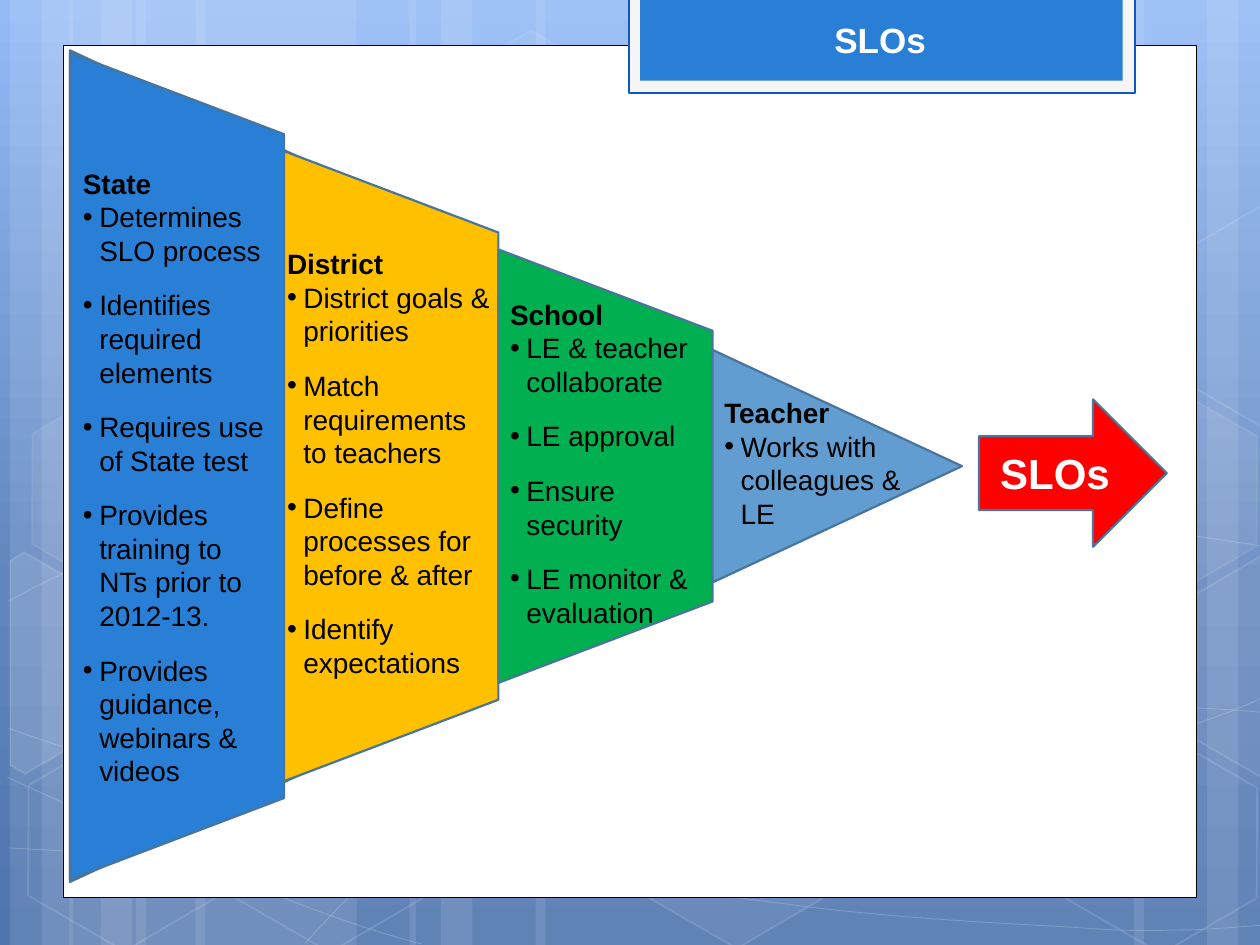
import math
from copy import deepcopy

from lxml import etree
from pptx import Presentation
from pptx import util as u
from pptx.dml.color import RGBColor
from pptx.enum import shapes, text
from pptx.oxml import ns

COLUMNS, ROWS = 10, 7.5
KINDS = shapes.MSO_SHAPE
WHITE, BLACK, BLUE, EDGE = "FFFFFF", "000000", "297FD5", "49749B"

STRIPES = [(1.08, 1.75), (0.08, 0.5), (0.33, 0.83), (1.55, 1.75), (0.55, 0.5), (0.8, 0.83),
           (7.33, 1.75), (9.58, 0.5), (9, 0.83), (4.25, 3.08), (3.25, 0.5), (3.5, 0.83)]
HEXAGONS = [(3.34, 0.36, 4, 8), (4.97, 5.89, 6, 12), (0.11, 5.91, None, 12),
            (0.14, 3.12, 7, 8), (1.74, 5.92, None, 12), (7.53, 4.53, 10, 12),
            (8.34, 5.93, None, 12), (8.34, 3.14, 7, 8)]
CUT_HEXAGONS = [
    ((0.36, 5.35), 10, [(0.08, 4.45), (0.19, 4.38), (0.96, 4.82), (0.95, 5.7), (0.2, 6.14),
                        (0.08, 6.07)]),
    ((9.85, 5.2), 4, [(9.26, 4.85), (10.01, 4.41), (10.09, 4.46), (10.09, 6.13),
                      (10.02, 6.17), (9.26, 5.73)]),
    ((9.85, 2.41), None, [(9.26, 2.07), (10.01, 1.63), (10.1, 1.68), (10.09, 3.35),
                          (10.02, 3.39), (9.26, 2.95)]),
]
CURVES = [
    [(0.07, 6.73), (0.61, 6.76), (1.15, 6.79), (1.9, 6.78), (2.65, 6.77), (3.58, 6.75),
     (4.58, 6.65), (5.58, 6.55), (7, 6.36), (7.92, 6.17), (8.83, 5.98), (9.77, 5.68),
     (10.07, 5.51)],
    [(0.07, 4.77), (0.36, 4.61), (0.65, 4.46), (1.21, 4.31), (1.78, 4.16), (2.59, 3.94),
     (3.47, 3.87), (4.36, 3.8), (5.44, 3.79), (6.54, 3.87), (7.64, 3.95), (9.47, 4.26),
     (10.07, 4.34)],
    [(0.06, 6.17), (1.27, 6.72), (2.47, 7.27), (3.34, 7.49)],
    [(0.07, 5.78), (0.38, 5.89), (0.7, 6), (1.28, 6.16), (1.86, 6.31), (2.73, 6.56),
     (3.57, 6.73), (4.4, 6.9), (5.45, 7.08), (6.28, 7.18), (7.11, 7.29), (8, 7.33),
     (8.53, 7.36), (9.05, 7.4), (9.19, 7.38), (9.45, 7.38), (9.71, 7.37), (9.89, 7.35),
     (10.07, 7.34)],
    [(2.42, 7.49), (2.6, 7.29), (2.78, 7.09), (3.02, 6.91), (3.26, 6.73), (3.6, 6.53),
     (3.88, 6.39), (4.16, 6.25), (4.33, 6.19), (4.7, 6.09), (5.06, 5.99), (5.73, 5.85),
     (6.08, 5.78), (6.44, 5.71), (6.49, 5.71), (6.8, 5.69), (7.11, 5.66), (7.6, 5.63),
     (7.94, 5.62), (8.29, 5.61), (8.86, 5.62), (8.86, 5.62), (8.86, 5.62), (9.53, 5.62),
     (9.53, 5.62), (9.71, 5.63), (9.88, 5.64), (9.97, 5.65), (10.06, 5.66), (10.03, 5.65),
     (10.06, 5.66)],
]
LEVELS = [
    ("State", BLUE, (0.56, 1.27, 1.7, 5.08),
     ["Determines SLO process", "Identifies required elements", "Requires use of State test",
      "Provides training to NTs prior to 2012-13.", "Provides guidance, webinars & videos"]),
    ("District", "FFC000", (2.18, 1.91, 1.84, 3.57),
     ["District goals & priorities", "Match requirements to teachers",
      "Define processes for before & after", "Identify expectations"]),
    ("School", "00B050", (3.95, 2.31, 1.8, 2.76),
     ["LE & teacher collaborate", "LE approval", "Ensure security",
      "LE monitor & evaluation"]),
    ("Teacher", "629DD1", (5.65, 3.09, 1.7, 1.62), ["Works with colleagues & LE"]),
]


def cells(*counts):
    """Turn numbers of grid cells into slide lengths."""
    return [u.Inches(count) for count in counts]


def color(value):
    """Return the colour of a hex string."""
    return RGBColor.from_string(value)


def fade(parent, percent):
    """Set the opacity of the solid fill inside an element."""
    tone = parent.find("a:solidFill/a:srgbClr", {"a": ns.nsuri("a")})
    etree.SubElement(tone, ns.qn("a:alpha")).set("val", str(percent * 1000))


def paint(shape, fill=None, line=None, width=1.25, fill_alpha=None, line_alpha=None):
    """Set the fill and outline of a shape and drop its shadow."""
    shape.shadow.inherit = False
    if fill:
        shape.fill.solid()
        shape.fill.fore_color.rgb = color(fill)
        if fill_alpha:
            fade(shape.element.spPr, fill_alpha)
    else:
        shape.fill.background()
    if line:
        shape.line.color.rgb = color(line)
        shape.line.width = u.Pt(width)
        if line_alpha:
            fade(shape.element.spPr.find(ns.qn("a:ln")), line_alpha)
    else:
        shape.line.fill.background()
    return shape


def add_block(page, kind, box, turn=0, adjust=None, **look):
    """Add a preset shape in a box."""
    shape = page.shapes.add_shape(kind, *cells(*box))
    shape.rotation = turn
    if adjust:
        shape.adjustments[0] = adjust
    return paint(shape, **look)


def add_outline(page, points, close, **look):
    """Add a freeform through points."""
    spots = [cells(*point) for point in points]
    builder = page.shapes.build_freeform(*spots[0])
    builder.add_line_segments(spots[1:], close=close)
    return paint(builder.convert_to_shape(), **look)


def add_curve(page, knots, **look):
    """Add an open chain of cubic curves."""
    shape = add_outline(page, knots, False, **look)
    lines = list(shape.element.iter(ns.qn("a:lnTo")))
    track = lines[0].getparent()
    for start in range(0, len(lines), 3):
        curve = etree.SubElement(track, ns.qn("a:cubicBezTo"))
        for segment in lines[start:start + 3]:
            curve.append(segment[0])
            track.remove(segment)


def unturn(point, center, degrees):
    """Turn a point back around a center."""
    angle = math.radians(-degrees)
    x, y = point[0] - center[0], point[1] - center[1]
    return (center[0] + x * math.cos(angle) - y * math.sin(angle),
            center[1] + x * math.sin(angle) + y * math.cos(angle))


def write(para, words, size=16, tone=BLACK, bold=False, bullet=False, align=None):
    """Write formatted text into a paragraph."""
    span = para.add_run()
    span.text = words
    span.font.name, span.font.size, span.font.bold = "Arial", u.Pt(size), bold
    span.font.color.rgb = color(tone)
    para.alignment = align
    if bullet:
        para.space_after = u.Pt(12)
        props = para._p.get_or_add_pPr()
        indent = u.Inches(0.13)
        props.set("marL", str(indent))
        props.set("indent", str(-indent))
        etree.SubElement(props, ns.qn("a:buFont")).set("typeface", "Arial")
        etree.SubElement(props, ns.qn("a:buChar")).set("char", "•")


def add_text(page, box):
    """Add a wrapping text box and return its frame."""
    frame = page.shapes.add_textbox(*cells(*box)).text_frame
    frame.word_wrap = True
    frame.auto_size = text.MSO_AUTO_SIZE.SHAPE_TO_FIT_TEXT
    return frame


def draw_backdrop(page):
    """Draw the gradient, stripes, curves and hexagons."""
    fill = page.background.fill
    fill.gradient()
    fill.gradient_angle = 270
    last = page.element.find(".//" + ns.qn("a:gsLst"))[-1]
    last.addprevious(deepcopy(last))
    for stop, (place, tone) in zip(
            fill.gradient_stops, [(0, "93BBF6"), (0.62, "6186BE"), (1, "4F75AE")]):
        stop.position = place
        stop.color.rgb = color(tone)
    for left, width in STRIPES:
        add_block(page, KINDS.RECTANGLE, (left, 0, width, ROWS), fill=WHITE, fill_alpha=10)
    for knots in CURVES:
        add_curve(page, knots, line=WHITE, width=0.5, line_alpha=20)
    for left, top, alpha, line_alpha in HEXAGONS:
        add_block(page, KINDS.HEXAGON, (left, top, 1.75, 1.52), 30, 0.285, fill=alpha and WHITE,
                  fill_alpha=alpha, line=WHITE, width=1, line_alpha=line_alpha)
    for center, alpha, points in CUT_HEXAGONS:
        shape = add_outline(page, [unturn(point, center, 30) for point in points], True,
                            fill=alpha and WHITE, fill_alpha=alpha, line=WHITE, width=1,
                            line_alpha=12)
        shape.rotation = 30


def draw_frame(page, panel, tab):
    """Draw the white panel and the title tab."""
    left, top, width, height = tab
    add_block(page, KINDS.RECTANGLE, panel, fill=WHITE, line=BLACK, width=0.5)
    add_block(page, KINDS.RECTANGLE, tab, fill="F5F5F5", line="0E58C4")
    add_block(page, KINDS.RECTANGLE, (left + 0.09, top - 0.02, width - 0.19, height - 0.08),
              fill=BLUE)


def move_to_layout(page):
    """Move the shapes drawn so far from the page to its layout."""
    tree = page.slide_layout.shapes.element if hasattr(page.slide_layout.shapes, "element") \
        else page.slide_layout.element.cSld.spTree
    for holder in list(page.slide_layout.placeholders):
        tree.remove(holder.element)
    for shape in list(page.shapes):
        tree.append(shape.element)


def draw_funnel(page, box):
    """Draw the narrowing levels and their lists."""
    left, top, width, height = box
    middle, band, shrink = top + height / 2, 1.7, 1.56
    add_block(page, KINDS.ISOSCELES_TRIANGLE,
              (left + (width - height) / 2, middle - width / 2, height, width), 90,
              fill=LEVELS[-1][1], line=EDGE)
    for index, (_, tone, _, _) in enumerate(LEVELS[:-1]):
        length = height - 0.04 - shrink * index
        center = left + band * (index + 0.5)
        add_block(page, KINDS.TRAPEZOID, (center - length / 2, middle - band / 2, length, band),
                  90, 0.38, fill=tone, line=EDGE)
    for name, _, area, items in LEVELS:
        frame = add_text(page, area)
        write(frame.paragraphs[0], name, bold=True)
        for item in items:
            write(frame.add_paragraph(), item, bullet=True)


def draw_result(page, box):
    """Draw the arrow that names the result."""
    left, top, _, _ = box
    add_block(page, KINDS.RIGHT_ARROW, box, fill="FF0000", line=EDGE)
    frame = add_text(page, (left + 0.07, top + 0.33, 1.2, 0.5))
    write(frame.paragraphs[0], "SLOs", size=24, tone=WHITE, bold=True)


def main():
    """Build the slide and save the deck."""
    deck = Presentation()
    deck.slide_width, deck.slide_height = cells(COLUMNS, ROWS)
    page = deck.slides.add_slide(deck.slide_layouts[6])
    draw_backdrop(page)
    draw_frame(page, (0.5, 0.36, 9, 6.76), (4.99, -0.02, 4.02, 0.76))
    move_to_layout(page)
    draw_funnel(page, (0.555, 0.4, 7.08, 6.6))
    draw_result(page, (7.77, 3.17, 1.49, 1.17))
    title = add_text(page, (5.18, 0.1, 3.61, 0.44))
    write(title.paragraphs[0], "SLOs", size=20, tone=WHITE, bold=True,
          align=text.PP_ALIGN.CENTER)
    deck.save("out.pptx")


if __name__ == "__main__":
    main()
